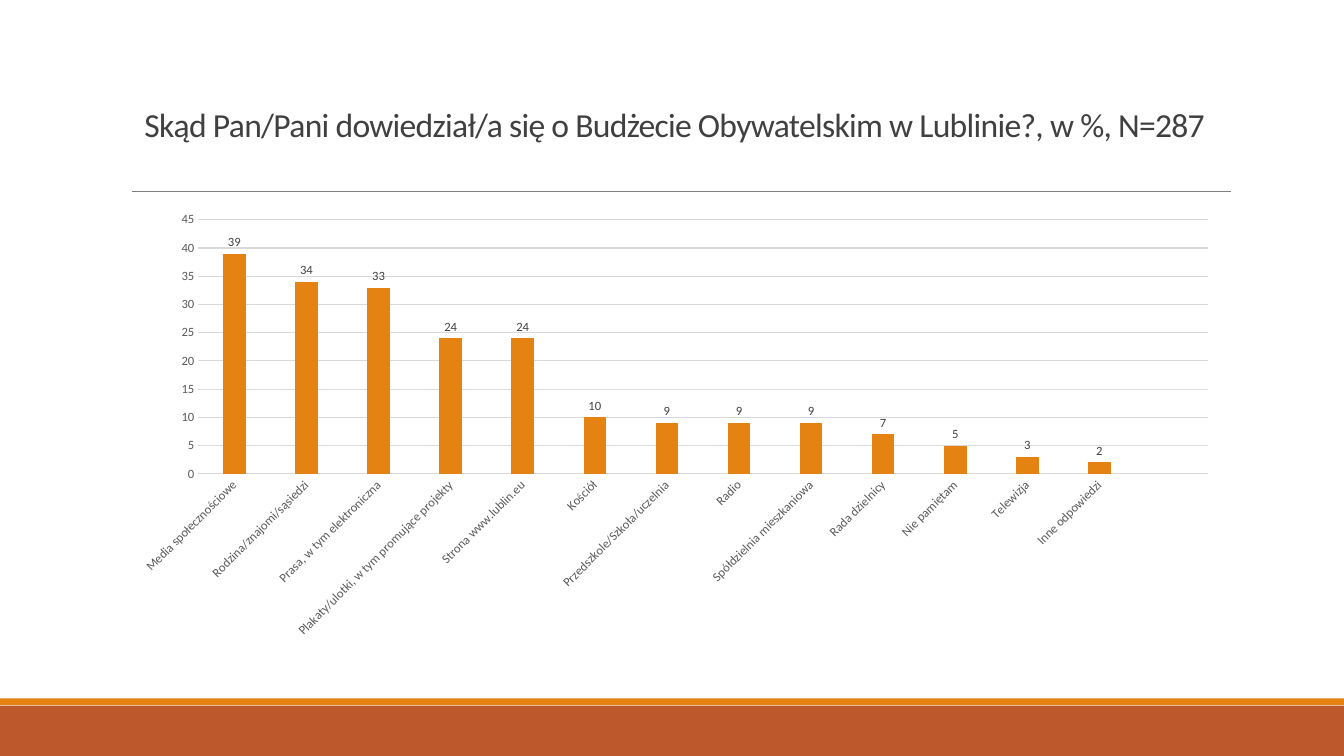
from dataclasses import dataclass

from lxml import etree
from pptx import Presentation
from pptx import util as u
from pptx.chart.data import CategoryChartData
from pptx.dml.color import RGBColor
from pptx.enum import chart as ch, shapes, text
from pptx.oxml.ns import qn


@dataclass(frozen=True)
class Theme:
    font: str = "Calibri"
    rust: str = "BD582C"
    orange: str = "E48312"
    rule: str = "808080"
    grid: str = "D9D9D9"
    dark: str = "404040"
    muted: str = "595959"
    title_size: float = 24
    chart_size: float = 10
    label_size: float = 9
    rule_width: float = 0.5
    grid_width: float = 0.75


class SlideBuilder:
    def __init__(self, slide, theme):
        self.slide = slide
        self.theme = theme

    def style_font(self, font, size, color):
        font.name = self.theme.font
        font.size = u.Pt(size)
        font.bold = False
        font.color.rgb = RGBColor.from_string(color)

    def style_line(self, line, color, width):
        line.color.rgb = RGBColor.from_string(color)
        line.width = u.Pt(width)

    def band(self, top, height, color):
        band = self.slide.shapes.add_shape(
            shapes.MSO_SHAPE.RECTANGLE, 0, u.Pt(top), u.Pt(960), u.Pt(height))
        band.shadow.inherit = False
        band.fill.solid()
        band.fill.fore_color.rgb = RGBColor.from_string(color)
        band.line.fill.background()

    def rule(self, left, right, y):
        rule = self.slide.shapes.add_connector(
            shapes.MSO_CONNECTOR.STRAIGHT, u.Pt(left), u.Pt(y), u.Pt(right), u.Pt(y))
        self.style_line(rule.line, self.theme.rule, self.theme.rule_width)
        etree.SubElement(rule._element.spPr, qn("a:effectLst"))

    def title(self, wording, left, top, width, height):
        title = self.slide.shapes.title
        title.left, title.top = u.Pt(left), u.Pt(top)
        title.width, title.height = u.Pt(width), u.Pt(height)
        frame = title.text_frame
        frame.word_wrap = True
        frame.auto_size = text.MSO_AUTO_SIZE.NONE
        frame.vertical_anchor = text.MSO_ANCHOR.BOTTOM
        paragraph = frame.paragraphs[0]
        paragraph.alignment = text.PP_ALIGN.LEFT
        paragraph.line_spacing = 0.85
        run = paragraph.add_run()
        run.text = wording
        self.style_font(run.font, self.theme.title_size, self.theme.dark)
        run._r.get_or_add_rPr().set("spc", "-50")

    def column_chart(self, answers, left, top, width, height):
        theme = self.theme
        data = CategoryChartData(number_format="0")
        data.categories = [source for source, share in answers]
        data.add_series("Series 1", [share for source, share in answers])
        chart = self.slide.shapes.add_chart(
            ch.XL_CHART_TYPE.COLUMN_CLUSTERED,
            u.Pt(left), u.Pt(top), u.Pt(width), u.Pt(height), data).chart
        chart.has_title = False
        chart.has_legend = False
        self.style_font(chart.font, theme.chart_size, "000000")

        sources, shares = chart.category_axis, chart.value_axis
        for axis in (sources, shares):
            axis.major_tick_mark = ch.XL_TICK_MARK.NONE
            axis.minor_tick_mark = ch.XL_TICK_MARK.NONE
            self.style_font(axis.tick_labels.font, theme.label_size, theme.muted)
        self.style_line(sources.format.line, theme.grid, theme.grid_width)
        sources._element.txPr.find(qn("a:bodyPr")).set("rot", "-2700000")
        shares.minimum_scale, shares.maximum_scale, shares.major_unit = 0, 45, 5
        shares.format.line.fill.background()
        shares.has_major_gridlines = True
        self.style_line(shares.major_gridlines.format.line, theme.grid, theme.grid_width)
        shares.tick_labels.number_format = "0"
        shares.tick_labels.number_format_is_linked = False

        plot = chart.plots[0]
        plot.gap_width, plot.overlap = 219, -27
        plot.vary_by_categories = False
        columns = plot.series[0]
        columns.invert_if_negative = False
        columns.format.fill.solid()
        columns.format.fill.fore_color.rgb = RGBColor.from_string(theme.orange)
        labels = columns.data_labels
        labels.show_value = True
        labels.position = ch.XL_LABEL_POSITION.OUTSIDE_END
        labels.number_format = "0"
        labels.number_format_is_linked = False
        self.style_font(labels.font, theme.label_size, theme.dark)


ANSWERS = [
    ("Media społecznościowe", 39),
    ("Rodzina/znajomi/sąsiedzi", 34),
    ("Prasa, w tym elektroniczna", 33),
    ("Plakaty/ulotki, w tym promujące projekty", 24),
    ("Strona www.lublin.eu", 24),
    ("Kościół", 10),
    ("Przedszkole/Szkoła/uczelnia", 9),
    ("Radio", 9),
    ("Spółdzielnia mieszkaniowa", 9),
    ("Rada dzielnicy", 7),
    ("Nie pamiętam", 5),
    ("Telewizja", 3),
    ("Inne odpowiedzi", 2),
    ("", None),
]


def main():
    deck = Presentation()
    deck.slide_width, deck.slide_height = u.Pt(960), u.Pt(540)
    theme = Theme()
    survey = SlideBuilder(deck.slides.add_slide(deck.slide_layouts[5]), theme)
    survey.band(504, 36, theme.rust)
    survey.band(498.8, 5, theme.orange)
    survey.rule(94.3, 879, 136.8)
    survey.title(
        "Skąd Pan/Pani dowiedział/a się o Budżecie Obywatelskim w Lublinie?, w %, N=287",
        96, 31.7, 792, 75)
    survey.column_chart(ANSWERS, 86.4, 145.4, 792, 316.8)
    deck.save("out.pptx")


if __name__ == "__main__":
    main()
